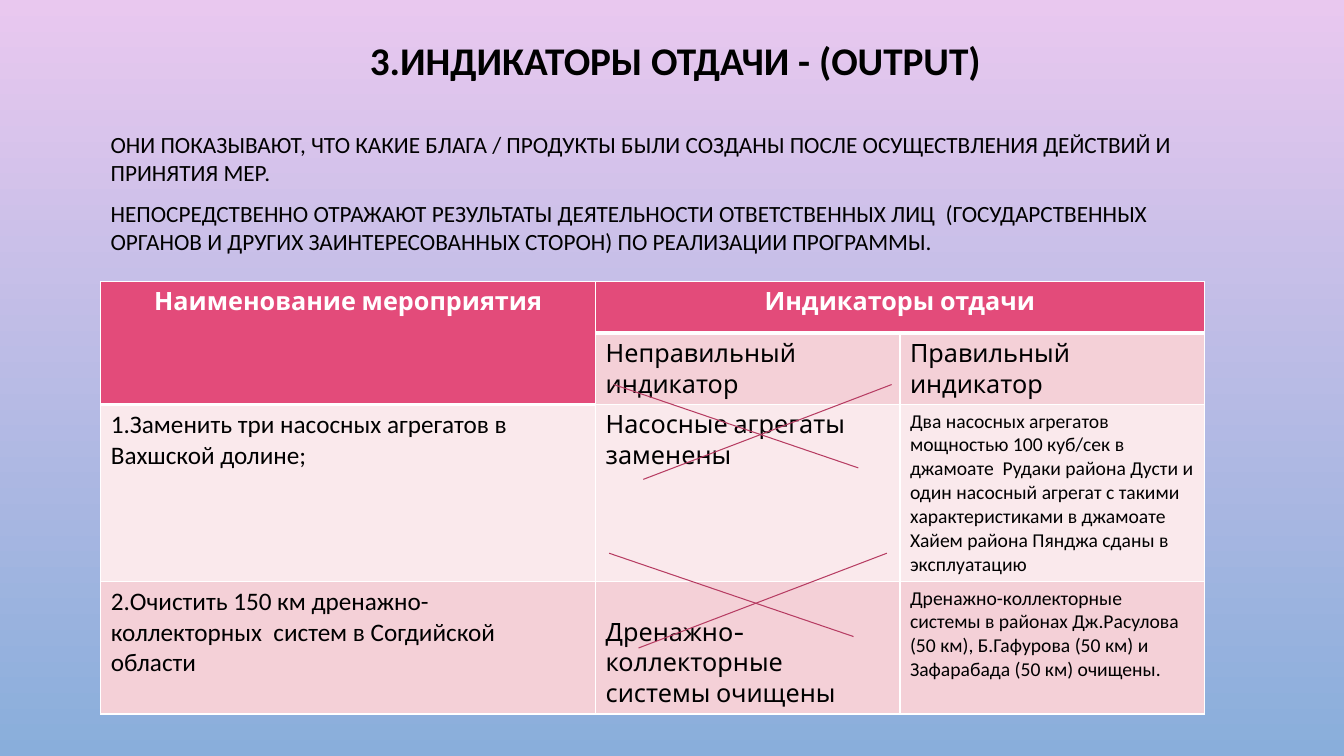
from lxml.etree import SubElement
from pptx import Presentation
from pptx.dml.color import RGBColor
from pptx.enum.shapes import MSO_CONNECTOR
from pptx.enum.text import MSO_ANCHOR, PP_ALIGN
from pptx.oxml.ns import qn
from pptx.util import Cm, Pt

BLACK = RGBColor(0x00, 0x00, 0x00)
WHITE = RGBColor(0xFF, 0xFF, 0xFF)
HEADER_PINK = RGBColor(0xE3, 0x4B, 0x7A)
BAND_PINK = RGBColor(0xF4, 0xD0, 0xD7)
PALE_PINK = RGBColor(0xFA, 0xE9, 0xEC)
CROSS_RED = RGBColor(0xB6, 0x3C, 0x62)
SKY_TOP = RGBColor(0xE9, 0xC8, 0xEF)
SKY_BOTTOM = RGBColor(0x89, 0xAE, 0xDB)

TITLE = "3.ИНДИКАТОРЫ ОТДАЧИ - (OUTPUT)"
INTRO = [
    "ОНИ ПОКАЗЫВАЮТ, ЧТО КАКИЕ БЛАГА / ПРОДУКТЫ БЫЛИ СОЗДАНЫ ПОСЛЕ "
    "ОСУЩЕСТВЛЕНИЯ ДЕЙСТВИЙ И ПРИНЯТИЯ МЕР.",
    "НЕПОСРЕДСТВЕННО ОТРАЖАЮТ РЕЗУЛЬТАТЫ ДЕЯТЕЛЬНОСТИ ОТВЕТСТВЕННЫХ ЛИЦ  "
    "(ГОСУДАРСТВЕННЫХ ОРГАНОВ И ДРУГИХ ЗАИНТЕРЕСОВАННЫХ СТОРОН) ПО РЕАЛИЗАЦИИ ПРОГРАММЫ.",
]
HEADERS = ["Наименование мероприятия", "Индикаторы отдачи"]
SUBHEADERS = ["Неправильный индикатор", "Правильный индикатор"]
MEASURES = [
    (
        "1.Заменить три насосных агрегатов в Вахшской долине;",
        "Насосные агрегаты заменены",
        "Два насосных агрегатов мощностью 100 куб/сек в джамоате  Рудаки района Дусти "
        "и один насосный агрегат с такими характеристиками в джамоате Хайем района Пянджа "
        "сданы в эксплуатацию",
    ),
    (
        "2.Очистить 150 км дренажно- коллекторных  систем в Согдийской области",
        "Дренажно-коллекторные системы очищены",
        "Дренажно-коллекторные системы в районах Дж.Расулова (50 км), "
        "Б.Гафурова (50 км) и Зафарабада (50 км) очищены.",
    ),
]
COLUMN_WIDTHS = [12.47, 7.67, 7.67]
ROW_HEIGHTS = [1.3, 1.8, 4.46, 3.34]
MEASURE_FONTS = [("Calibri", 18), ("Cabin", 18), ("Calibri", 14)]


def paint_background(page):
    """Fill the page with a vertical gradient."""
    fill = page.background.fill
    fill.gradient()
    fill.gradient_angle = 270
    for stop, color in zip(fill.gradient_stops, (SKY_TOP, SKY_BOTTOM)):
        stop.color.rgb = color


def add_span(para, text, font, size, color=BLACK, bold=False):
    """Add one formatted run to a paragraph."""
    span = para.add_run()
    span.text = text
    span.font.name = font
    span.font.size = Pt(size)
    span.font.bold = bold
    span.font.color.rgb = color


def add_text(page, left, top, width, height, texts, size, bold=False):
    """Add a wrapping text box and return its text frame."""
    box = page.shapes.add_textbox(Cm(left), Cm(top), Cm(width), Cm(height))
    frame = box.text_frame
    frame.word_wrap = True
    for index, text in enumerate(texts):
        para = frame.add_paragraph() if index else frame.paragraphs[0]
        if index:
            para.space_before = Pt(10)
        add_span(para, text, "Calibri", size, bold=bold)
    return frame


def style_cell(cell, color, edges):
    """Give a cell white borders of the stated widths and a solid fill."""
    properties = cell._tc.get_or_add_tcPr()
    for side, width in edges.items():
        line = SubElement(properties, qn(f"a:ln{side}"), w=str(Pt(width)))
        paint = SubElement(line, qn("a:solidFill"))
        SubElement(paint, qn("a:srgbClr"), val=str(WHITE))
    cell.fill.solid()
    cell.fill.fore_color.rgb = color


def style_grid(table):
    """Colour every cell, with a thick rule under the header cells."""
    for row in range(len(ROW_HEIGHTS)):
        for column in range(len(COLUMN_WIDTHS)):
            header = row == 0 or (row == 1 and column == 0)
            edges = {"L": 1, "R": 1}
            if row == 0:
                edges["T"] = 1
            edges["B"] = 3 if header else 1
            band = BAND_PINK if row % 2 else PALE_PINK
            style_cell(table.cell(row, column), HEADER_PINK if header else band, edges)


def add_indicator_table(page):
    """Add the table of measures with wrong and right indicators."""
    frame = page.shapes.add_table(
        len(ROW_HEIGHTS), len(COLUMN_WIDTHS), Cm(2.54), Cm(7.09),
        Cm(sum(COLUMN_WIDTHS)), Cm(sum(ROW_HEIGHTS)),
    )
    table = frame.table
    for column, width in zip(table.columns, COLUMN_WIDTHS):
        column.width = Cm(width)
    for row, height in zip(table.rows, ROW_HEIGHTS):
        row.height = Cm(height)
    style_grid(table)
    table.cell(0, 0).merge(table.cell(1, 0))
    table.cell(0, 1).merge(table.cell(0, 2))

    for column, text in enumerate(HEADERS):
        para = table.cell(0, column).text_frame.paragraphs[0]
        para.alignment = PP_ALIGN.CENTER
        add_span(para, text, "Cabin", 18, WHITE, True)
    for column, text in enumerate(SUBHEADERS, 1):
        add_span(table.cell(1, column).text_frame.paragraphs[0], text, "Cabin", 18)
    for row, measure in enumerate(MEASURES, 2):
        for column, (text, (font, size)) in enumerate(zip(measure, MEASURE_FONTS)):
            add_span(table.cell(row, column).text_frame.paragraphs[0], text, font, size)
    table.cell(3, 1).margin_top = Cm(0.89)


def add_line(page, x1, y1, x2, y2):
    """Add one thin red line."""
    line = page.shapes.add_connector(
        MSO_CONNECTOR.STRAIGHT, Cm(x1), Cm(y1), Cm(x2), Cm(y2)
    )
    line.line.color.rgb = CROSS_RED
    line.line.width = Pt(0.75)
    SubElement(line._element.spPr, qn("a:effectLst"))


def add_cross(page, left, top):
    """Cross out a wrong indicator with two lines."""
    add_line(page, left + 7, top, left + 0.74, top + 2.39)
    add_line(page, left, top, left + 6.16, top + 2.1)


def main():
    """Build the slide and save it."""
    deck = Presentation()
    deck.slide_width, deck.slide_height = Cm(33.87), Cm(19.05)
    page = deck.slides.add_slide(deck.slide_layouts[6])
    paint_background(page)

    title = add_text(page, 2.64, 0.89, 28.75, 1.35, [TITLE], 28, bold=True)
    title.vertical_anchor = MSO_ANCHOR.BOTTOM
    title.paragraphs[0].alignment = PP_ALIGN.CENTER
    title.paragraphs[0].line_spacing = 0.9
    add_text(page, 2.54, 3.15, 28.75, 3.63, INTRO, 16.6)

    add_indicator_table(page)
    add_cross(page, 15.47, 9.69)
    add_cross(page, 15.35, 13.94)
    deck.save("out.pptx")


if __name__ == "__main__":
    main()
